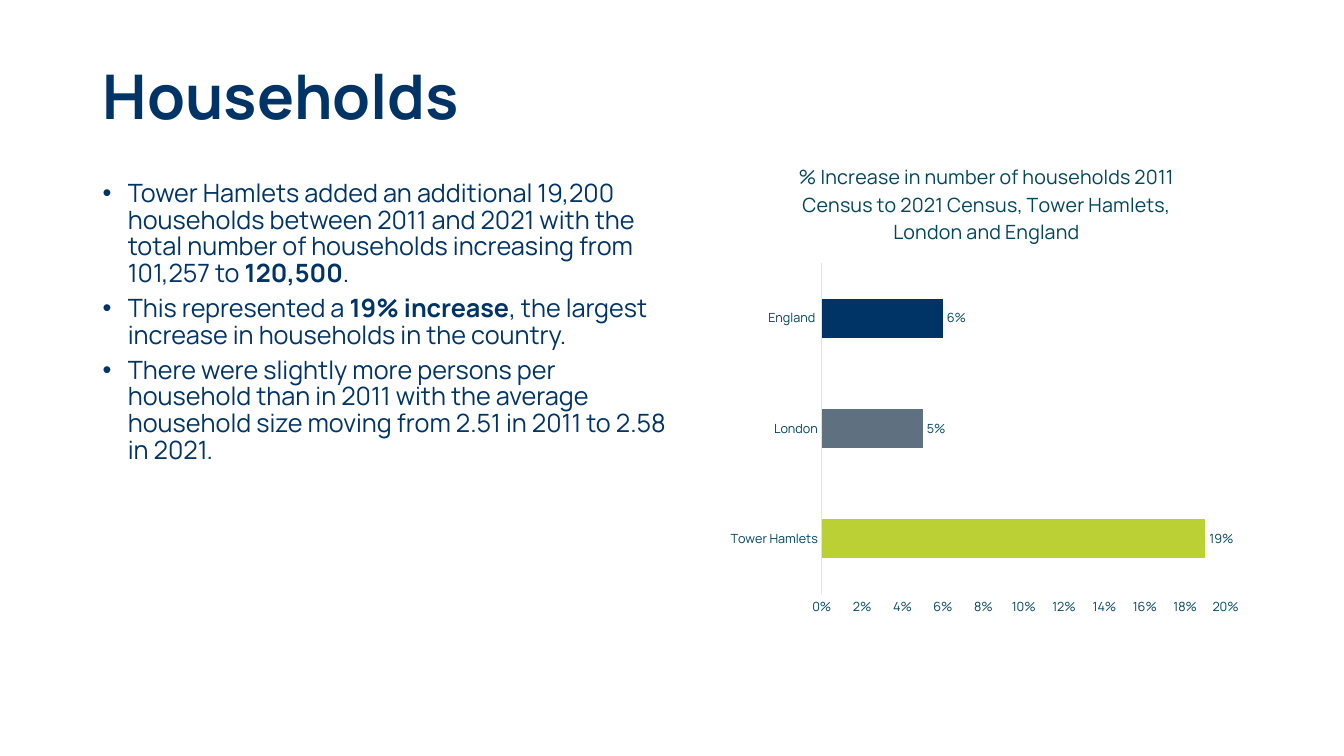
import pptx
import pptx.util
import pptx.chart.data
import pptx.dml.color
import pptx.enum.chart
import pptx.enum.text
import pptx.oxml
import pptx.oxml.ns
from lxml import etree

PX = 9144
FONT = "Manrope"
NAVY = pptx.dml.color.RGBColor(0x00, 0x33, 0x66)
TEAL = pptx.dml.color.RGBColor(0x00, 0x44, 0x5E)
GREY = pptx.dml.color.RGBColor(0x5F, 0x71, 0x80)
LIME = pptx.dml.color.RGBColor(0xBA, 0xD0, 0x34)
PALE = pptx.dml.color.RGBColor(0xC1, 0xEE, 0xFF)

POINTS = [
    [("Tower Hamlets added an additional 19,200 households between 2011 and 2021 "
      "with the total number of households increasing from 101,257 to ", False),
     ("120,500", True), (".", False)],
    [("This represented a ", False), ("19% increase", True),
     (", the largest increase in households in the country.", False)],
    [("There were slightly more persons per household than in 2011 with the "
      "average household size moving from 2.51 in 2011 to 2.58 in 2021.", False)],
]
BARS = [("Tower Hamlets", 0.19, LIME), ("London", 0.05, GREY), ("England ", 0.06, NAVY)]
HEAD = ("% Increase in number of households 2011 Census to 2021 Census, "
        "Tower Hamlets, London and England")


def scale(box):
    return [pptx.util.Emu(n * PX) for n in box]


def style(font, size, color, bold=False):
    font.name = FONT
    font.size = pptx.util.Pt(size)
    font.color.rgb = color
    font.bold = bold


def add_frame(slide, box):
    frame = slide.shapes.add_textbox(*scale(box)).text_frame
    frame.word_wrap = True
    return frame


def add_title(slide, box):
    frame = add_frame(slide, box)
    frame.vertical_anchor = pptx.enum.text.MSO_ANCHOR.MIDDLE
    frame.text = "Households"
    para = frame.paragraphs[0]
    para.line_spacing = 0.9
    style(para.runs[0].font, 44, NAVY, True)


def add_body(slide, box):
    frame = add_frame(slide, box)
    for i, parts in enumerate(POINTS):
        para = frame.paragraphs[0] if i == 0 else frame.add_paragraph()
        para.line_spacing = 0.88
        para.space_before = pptx.util.Pt(6 if i else 0)
        props = para._p.get_or_add_pPr()
        props.set("marL", str(25 * PX))
        props.set("indent", str(-25 * PX))
        etree.SubElement(props, pptx.oxml.ns.qn("a:buFont")).set("typeface", "Arial")
        etree.SubElement(props, pptx.oxml.ns.qn("a:buChar")).set("char", "•")
        for text, bold in parts:
            run = para.add_run()
            run.text = text
            style(run.font, 18, NAVY, bold)


def set_plot(chart, left, top, width, height):
    area = chart._chartSpace.chart.plotArea
    old = area.find(pptx.oxml.ns.qn("c:layout"))
    if old is not None:
        area.remove(old)
    area.insert(0, pptx.oxml.parse_xml(
        f'<c:layout {pptx.oxml.ns.nsdecls("c")}><c:manualLayout>'
        '<c:layoutTarget val="inner"/><c:xMode val="edge"/><c:yMode val="edge"/>'
        f'<c:x val="{left}"/><c:y val="{top}"/><c:w val="{width}"/><c:h val="{height}"/>'
        '</c:manualLayout></c:layout>'))


def add_bars(slide, box):
    data = pptx.chart.data.CategoryChartData(number_format="0%")
    data.categories = [name for name, _, _ in BARS]
    data.add_series("Series 1", [value for _, value, _ in BARS])
    kind = pptx.enum.chart.XL_CHART_TYPE.BAR_CLUSTERED
    chart = slide.shapes.add_chart(kind, *scale(box), data).chart
    style(chart.font, 10, TEAL)
    chart.has_legend = False
    chart.has_title = True
    chart.chart_title.include_in_layout = False
    frame = chart.chart_title.text_frame
    frame.text = HEAD
    style(frame.paragraphs[0].runs[0].font, 14, TEAL)
    set_plot(chart, 0.19, 0.25, 0.76, 0.69)

    for axis in (chart.category_axis, chart.value_axis):
        axis.has_major_gridlines = False
        axis.major_tick_mark = pptx.enum.chart.XL_TICK_MARK.NONE
        axis.minor_tick_mark = pptx.enum.chart.XL_TICK_MARK.NONE
        style(axis.tick_labels.font, 9, TEAL)
    line = chart.category_axis.format.line
    line.color.rgb = PALE
    line.width = pptx.util.Pt(0.75)
    scope = chart.value_axis
    scope.format.line.fill.background()
    scope.minimum_scale = 0
    scope.maximum_scale = 0.2
    scope.major_unit = 0.02
    scope.tick_labels.number_format = "0%"
    scope.tick_labels.number_format_is_linked = False

    plot = chart.plots[0]
    plot.gap_width = 182
    plot.vary_by_categories = False
    series = plot.series[0]
    for i, (_, _, color) in enumerate(BARS):
        fill = series.points[i].format.fill
        fill.solid()
        fill.fore_color.rgb = color
    labels = series.data_labels
    labels.show_value = True
    labels.number_format = "0%"
    labels.number_format_is_linked = False
    labels.position = pptx.enum.chart.XL_LABEL_POSITION.OUTSIDE_END
    style(labels.font, 9, TEAL)


def main():
    deck = pptx.Presentation()
    deck.slide_width, deck.slide_height = scale((1333, 750))
    slide = deck.slides.add_slide(deck.slide_layouts[6])
    add_title(slide, (92, 26, 1069, 145))
    add_body(slide, (92, 175, 593, 476))
    add_bars(slide, (715, 142, 527, 476))
    deck.save("out.pptx")


if __name__ == "__main__":
    main()
